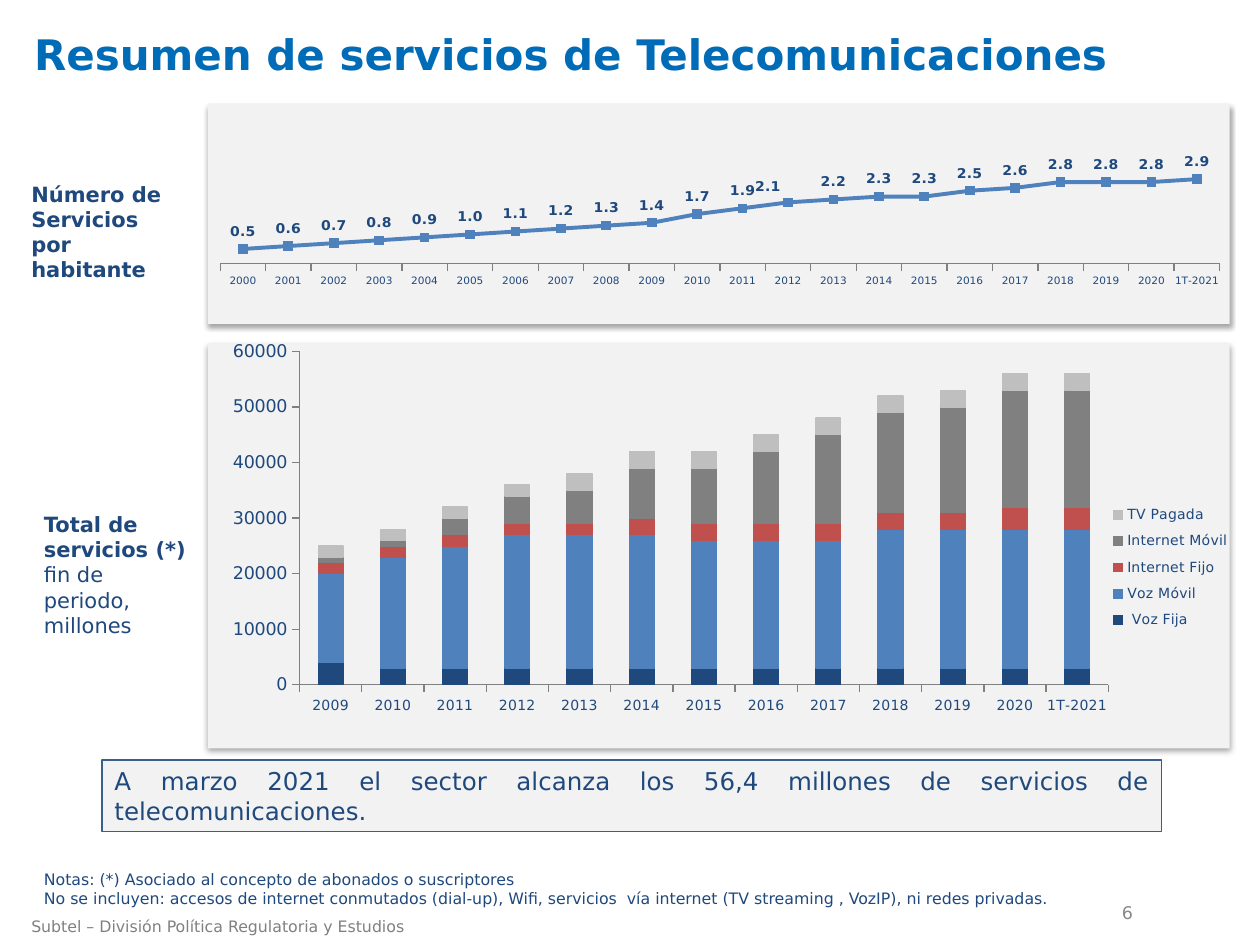
from lxml import etree
from pptx import Presentation
from pptx import util as u
from pptx.chart.data import CategoryChartData
from pptx.dml.color import RGBColor
from pptx.enum import chart as ec, shapes, text
from pptx.oxml import parse_xml
from pptx.oxml.ns import nsdecls, qn

Inches, Pt = u.Inches, u.Pt
FONT = "DejaVu Sans"
COLORS = {k: RGBColor.from_string(v) for k, v in {
    "title": "006CB7", "panel": "F2F2F2", "navy": "1F497D", "blue": "4F81BD",
    "brick": "C0504D", "gray": "808080", "silver": "BFBFBF",
    "border": "3A5F8C", "number": "898989"}.items()}


def style(f, size, color, bold=False):
    f.name, f.size, f.bold = FONT, Pt(size), bold
    f.color.rgb = COLORS[color]


def set_layout(parent, index, **parts):
    for old in parent.findall(qn("c:layout")):
        parent.remove(old)
    layout = parse_xml(f"<c:layout {nsdecls('c')}><c:manualLayout/></c:layout>")
    for tag, val in parts.items():
        etree.SubElement(layout[0], qn("c:" + tag)).set("val", str(val))
    parent.insert(index, layout)


prs = Presentation()
prs.slide_width, prs.slide_height = Inches(10), Inches(7.5)
s = prs.slides.add_slide(prs.slide_layouts[5])

for y, h in [(2.73, 3.21), (0.82, 1.75)]:
    sp = s.shapes.add_shape(shapes.MSO_SHAPE.RECTANGLE, Inches(1.65), Inches(y), Inches(8.11), Inches(h))
    sp.fill.solid()
    sp.fill.fore_color.rgb = COLORS["panel"]
    sp.line.fill.background()
    sp.shadow.inherit = False
    sp.element.spPr.find(qn("a:effectLst")).append(parse_xml(
        f'<a:outerShdw {nsdecls("a")} blurRad="{Pt(3.1)}" dist="{Pt(1.8)}" dir="5400000" '
        'rotWithShape="0"><a:srgbClr val="000000"><a:alpha val="35000"/></a:srgbClr></a:outerShdw>'))

title = s.shapes.title
title.left, title.top, title.width, title.height = Inches(0.17), Inches(0.17), Inches(9.29), Inches(0.51)
tf = title.text_frame
tf.text = "Resumen de servicios de Telecomunicaciones"
tf.vertical_anchor = text.MSO_ANCHOR.MIDDLE
tf.auto_size = text.MSO_AUTO_SIZE.NONE
tf.paragraphs[0].alignment = text.PP_ALIGN.LEFT
style(tf.paragraphs[0].font, 24, "title", True)

line_years = [str(y) for y in range(2000, 2021)] + ["1T-2021"]
per_person = [0.5, 0.6, 0.7, 0.8, 0.9, 1, 1.1, 1.2, 1.3, 1.4, 1.7,
              1.9, 2.1, 2.2, 2.3, 2.3, 2.5, 2.6, 2.8, 2.8, 2.8, 2.9]
services = [
    (" Voz Fija", "navy", [4] + [3] * 12),
    ("Voz Móvil", "blue", [16, 20, 22, 24, 24, 24, 23, 23, 23, 25, 25, 25, 25]),
    ("Internet Fijo", "brick", [2] * 5 + [3] * 6 + [4] * 2),
    ("Internet Móvil", "gray", [1, 1, 3, 5, 6, 9, 10, 13, 16, 18, 19, 21, 21]),
    ("TV Pagada", "silver", [2] * 4 + [3] * 9)]

line_data = CategoryChartData(number_format="#,##0.0")
line_data.categories = line_years
line_data.add_series("Servicios por habitante", per_person)
bar_data = CategoryChartData(number_format="General")
bar_data.categories = line_years[9:]
for name, color, thousands in services:
    bar_data.add_series(name, [v * 1000 for v in thousands])

charts = []
for kind, data, box, size, cat_size, top, plot_box in [
        (ec.XL_CHART_TYPE.LINE_MARKERS, line_data, (1.74, 1.22, 8.02, 1.37), 8, 6, 3,
         dict(x=0.001, y=0.095, w=0.989, h=0.527)),
        (ec.XL_CHART_TYPE.COLUMN_STACKED, bar_data, (1.54, 2.58, 8.38, 3.5), 10, 8, 60000,
         dict(x=0.1, y=0.06, w=0.766, h=0.756))]:
    ch = s.shapes.add_chart(kind, *[Inches(v) for v in box], data).chart
    charts.append(ch)
    style(ch.font, size, "navy")
    ch.has_title = ch.has_legend = False
    ch.plots[0].vary_by_categories = False
    for axis in (ch.category_axis, ch.value_axis):
        axis.has_major_gridlines = False
        axis.major_tick_mark = ec.XL_TICK_MARK.OUTSIDE
        axis.minor_tick_mark = ec.XL_TICK_MARK.NONE
        axis.format.line.color.rgb = COLORS["gray"]
        axis.format.line.width = Pt(0.75)
    style(ch.category_axis.tick_labels.font, cat_size, "navy")
    ch.value_axis.minimum_scale, ch.value_axis.maximum_scale = 0, top
    set_layout(ch.element.xpath(".//c:plotArea")[0], 0, layoutTarget="inner",
               xMode="edge", yMode="edge", **plot_box)

line, bars = charts
line.value_axis.visible = False
ser = line.series[0]
ser.smooth = False
ser.format.line.color.rgb = COLORS["blue"]
ser.format.line.width = Pt(2.25)
ser.marker.style, ser.marker.size = ec.XL_MARKER_STYLE.SQUARE, 5
ser.marker.format.fill.solid()
ser.marker.format.fill.fore_color.rgb = COLORS["blue"]
ser.marker.format.line.color.rgb = COLORS["blue"]
labels = ser.data_labels
labels.show_value = True
labels.number_format, labels.number_format_is_linked = "#,##0.0", False
for label in (labels, ser.points[12].data_label):
    label.position = ec.XL_LABEL_POSITION.ABOVE
    style(label.font, 8, "navy", True)
set_layout(line.element.xpath(".//c:dLbl")[0], 1, x=-0.02, y=0.01)

bars.plots[0].gap_width, bars.plots[0].overlap = 150, 100
bars.value_axis.major_unit = 10000
for ser, (name, color, thousands) in zip(bars.series, services):
    ser.format.fill.solid()
    ser.format.fill.fore_color.rgb = COLORS[color]
    ser.format.line.color.rgb = COLORS[color]
    ser.format.line.width = Pt(0.75)
bars.has_legend = True
bars.legend.position = ec.XL_LEGEND_POSITION.RIGHT
bars.legend.include_in_layout = False
style(bars.legend.font, 8, "navy")
set_layout(bars.element.xpath(".//c:legend")[0], 1, xMode="edge", yMode="edge",
           x=0.86, y=0.39, w=0.13, h=0.32)

for box, size, color, lines, bold_lines in [
        ((0.25, 4.01, 1.4, 1.11), 12, "navy", ["Total de servicios (*)", "fin de periodo,", "millones"], 1),
        ((0.25, 6.85, 8.56, 0.61), 9, "navy",
         ["Notas: (*) Asociado al concepto de abonados o suscriptores",
          "No se incluyen: accesos de internet conmutados (dial-up), Wifi, servicios  vía internet "
          "(TV streaming , VozIP), ni redes privadas."], 0),
        ((0.15, 1.39, 1.39, 0.91), 12, "navy", ["Número de Servicios", "por habitante"], 2),
        ((0.15, 7.23, 5.33, 0.25), 9, "gray", ["Subtel – División Política Regulatoria y Estudios"], 0),
        ((6.76, 7.14, 2.33, 0.21), 10, "number", ["6"], 0)]:
    tf = s.shapes.add_textbox(*[Inches(v) for v in box]).text_frame
    tf.word_wrap = True
    tf.text = "\n".join(lines)
    for i, p in enumerate(tf.paragraphs):
        style(p.font, size, color, i < bold_lines)
    if color == "number":
        tf.vertical_anchor = text.MSO_ANCHOR.MIDDLE
        p.alignment = text.PP_ALIGN.RIGHT
    else:
        tf.auto_size = text.MSO_AUTO_SIZE.SHAPE_TO_FIT_TEXT

sp = s.shapes.add_shape(shapes.MSO_SHAPE.RECTANGLE, Inches(0.81), Inches(6.03), Inches(8.41), Inches(0.57))
sp.shadow.inherit = False
sp.fill.solid()
sp.fill.fore_color.rgb = COLORS["panel"]
sp.line.color.rgb = COLORS["border"]
sp.line.width = Pt(1)
tf = sp.text_frame
tf.word_wrap = True
tf.vertical_anchor = text.MSO_ANCHOR.MIDDLE
p = tf.paragraphs[0]
p.text = "A marzo 2021 el sector alcanza los 56,4 millones de servicios de telecomunicaciones."
p.alignment, p.space_after = text.PP_ALIGN.JUSTIFY, Pt(4)
style(p.font, 14, "navy")

prs.save("out.pptx")
